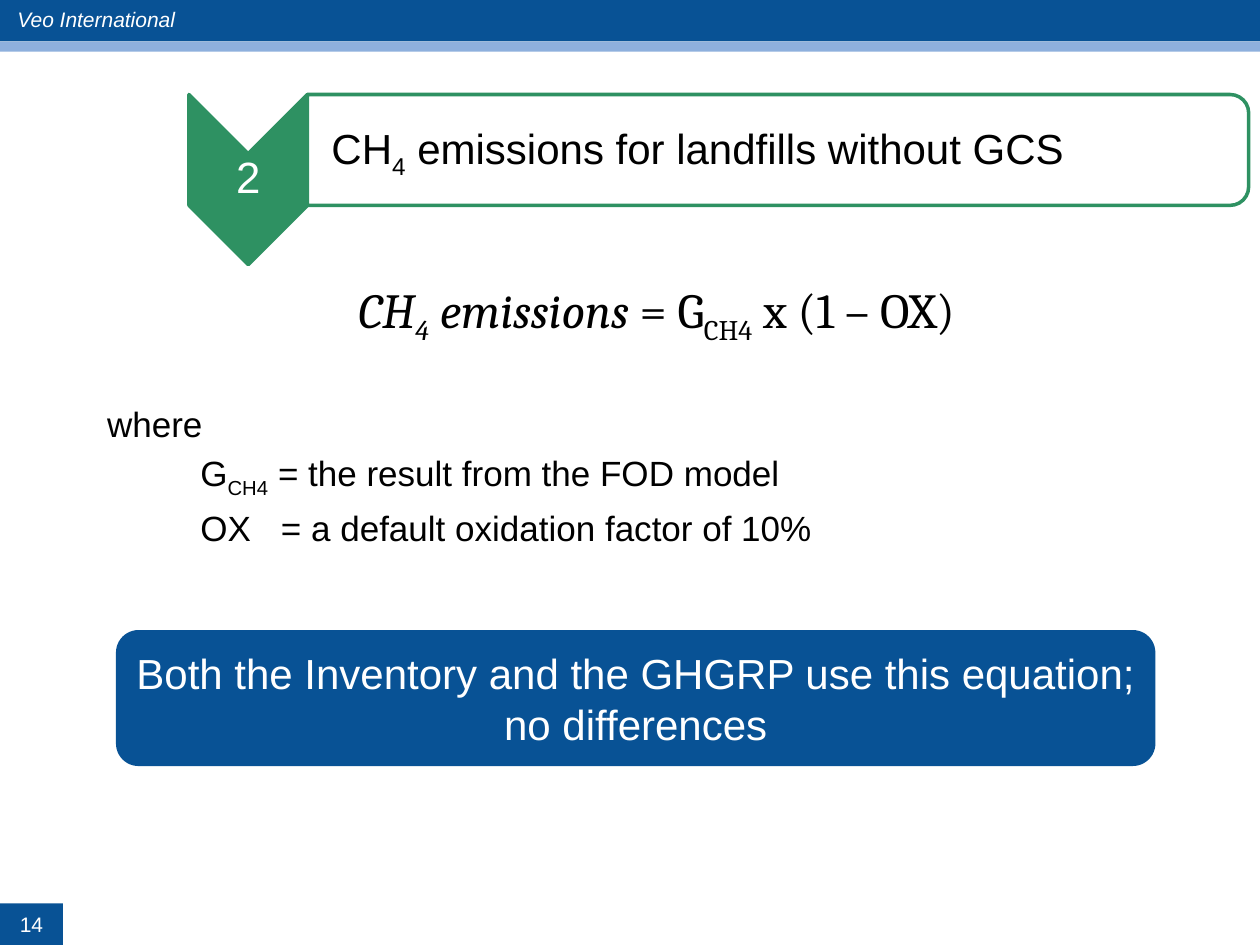
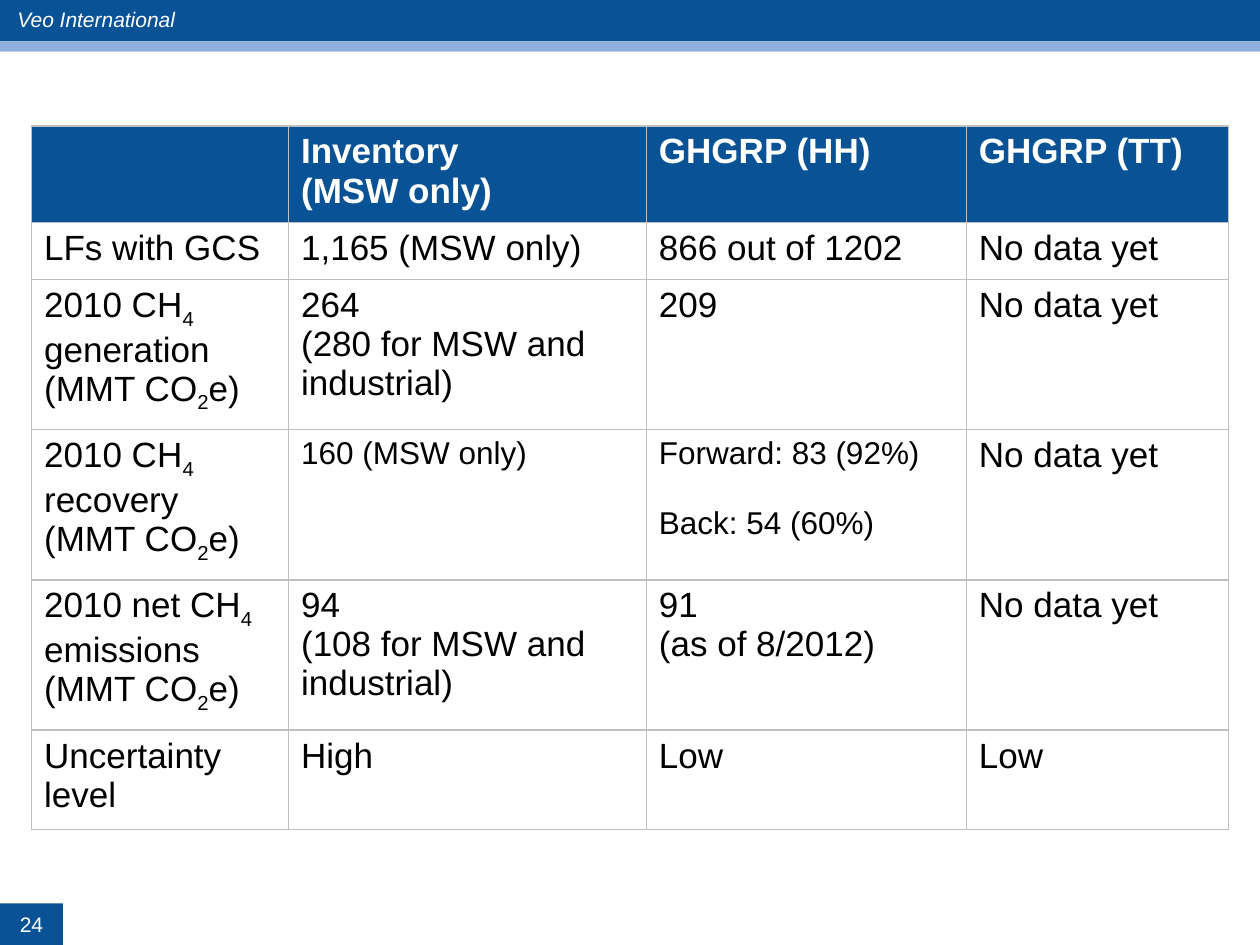
from lxml.etree import SubElement
from pptx import Presentation
from pptx.dml.color import RGBColor
from pptx.enum.shapes import MSO_SHAPE as SHAPE
from pptx.enum.text import MSO_ANCHOR as ANCHOR, MSO_AUTO_SIZE as AUTO, PP_ALIGN as ALIGN
from pptx.oxml.ns import qn
from pptx.util import Inches, Pt

COLORS = {"blue": "085295", "sky": "8EB0DD", "green": "2E9162",
          "grey": "BFBFBF", "white": "FFFFFF", "black": "000000"}
COL_WIDTHS = [2.04, 2.84, 2.54, 2.08]
ROW_HEIGHTS = [0.76, 0.45, 1.19, 1.19, 1.19, 0.79]
ROWS = [
    ["", "Inventory\n(MSW only)", "GHGRP (HH)", "GHGRP (TT)"],
    ["LFs with GCS", "1,165 (MSW only)", "866 out of 1202", "No data yet"],
    ["2010 CH_4_ generation\n(MMT CO_2_e)", "264\n(280 for MSW and industrial)",
     "209", "No data yet"],
    ["2010 CH_4_ recovery (MMT CO_2_e)", "160 (MSW only)",
     "Forward: 83 (92%)\nBack: 54 (60%)", "No data yet"],
    ["2010 net CH_4_ emissions\n(MMT CO_2_e)", "94\n(108 for MSW and industrial)",
     "91\n(as of 8/2012)", "No data yet"],
    ["Uncertainty level", "High", "Low", "Low"],
]
SMALL_CELLS = {(3, 1), (3, 2)}


def rgb(name):
    return RGBColor.from_string(COLORS[name])


def write(p, text, size=20, color="black", font="Arial", bold=False, italic=False,
          align=None, before=None, line=None):
    for i, part in enumerate(text.split("_")):
        if not part:
            continue
        r = p.add_run()
        r.text = part
        r.font.name, r.font.size = font, Pt(size)
        r.font.bold, r.font.italic = bold, italic
        r.font.color.rgb = rgb(color)
        if i % 2:
            r.font._element.set("baseline", "-25000")
    if align is not None:
        p.alignment = align
    if before is not None:
        p.space_before = Pt(before)
    if line is not None:
        p.line_spacing = line


def indent(p, left=0, first=0):
    pPr = p._p.get_or_add_pPr()
    pPr.set("marL", str(Inches(left)))
    pPr.set("indent", str(Inches(first)))
    SubElement(pPr, qn("a:buNone"))


def set_margins(tf, left, other):
    tf.margin_left = Inches(left)
    tf.margin_top = tf.margin_right = tf.margin_bottom = Inches(other)


def place(sp, x, y, w, h):
    sp.left, sp.top, sp.width, sp.height = map(Inches, (x, y, w, h))


def add_shape(s, kind, x, y, w, h, fill, line=None, turned=False):
    if turned:
        x, y, w, h = x + (w - h) / 2, y + (h - w) / 2, h, w
    sp = s.shapes.add_shape(kind, *map(Inches, (x, y, w, h)))
    sp.rotation = 90 if turned else 0
    sp.shadow.inherit = False
    sp.fill.solid()
    sp.fill.fore_color.rgb = rgb(fill)
    if line:
        sp.line.color.rgb = rgb(line)
        sp.line.width = Pt(2)
    else:
        sp.line.fill.background()
    return sp


def label(sp, text, **fmt):
    tf = sp.text_frame
    tf.word_wrap = True
    tf.vertical_anchor = ANCHOR.MIDDLE
    write(tf.paragraphs[0], text, align=ALIGN.CENTER, **fmt)


def add_master_bands(prs, s):
    top = add_shape(s, SHAPE.RECTANGLE, 0, 0, 10, 0.33, "blue")
    name = s.shapes.add_textbox(*map(Inches, (0.04, 0, 2.5, 0.3)))
    name.text_frame.word_wrap = True
    write(name.text_frame.paragraphs[0], "Veo International", size=12,
          color="white", italic=True, align=ALIGN.LEFT)
    under = add_shape(s, SHAPE.RECTANGLE, 0, 0.33, 10, 0.08, "sky")
    for sp in (top, name, under):
        prs.slide_master.shapes._spTree.append(sp._element)


def add_page_number(s, number):
    sp = add_shape(s, SHAPE.RECTANGLE, 0, 7.17, 0.5, 0.33, "blue")
    label(sp, str(number), size=12, color="white")


def add_step_title(s, number, text, x, y, w, bar_h=0.88, arrow_w=0.94, arrow_h=1.35):
    add_shape(s, SHAPE.CHEVRON, x, y, arrow_w, arrow_h, "green", "green", turned=True)
    num = s.shapes.add_textbox(*map(Inches, (x, y + 0.47, arrow_w, 0.4)))
    set_margins(num.text_frame, 0.02, 0.02)
    label(num, number, size=25, color="white", line=0.9)

    bar = x + arrow_w
    add_shape(s, SHAPE.ROUND_2_SAME_RECTANGLE, bar, y, w - arrow_w, bar_h,
              "white", "green", turned=True)
    title = s.shapes.title
    place(title, bar, y + 0.04, w - arrow_w - 0.04, bar_h - 0.09)
    s.shapes._spTree.append(title._element)
    tf = title.text_frame
    tf.auto_size = AUTO.NONE
    tf.vertical_anchor = ANCHOR.MIDDLE
    set_margins(tf, 0.19, 0.02)
    write(tf.paragraphs[0], text, size=24, align=ALIGN.LEFT, line=0.9)


def add_equation(s, x, y, w, h):
    body = s.placeholders[1]
    place(body, x, y, w, h)
    tf = body.text_frame
    tf.auto_size = AUTO.NONE
    p = tf.paragraphs[0]
    indent(p, 0.38, -0.38)
    write(p, "CH_4_ emissions ", size=28, font="Cambria", italic=True)
    write(p, "= G_CH4_ x (1 – OX)", size=28, font="Cambria", align=ALIGN.CENTER, before=0)
    for text, left, first, before in [
            ("where", 0, 0, 32),
            ("G_CH4_ = the result from the FOD model", 1.18, -0.44, 4),
            ("OX\t= a default oxidation factor of 10%", 1.38, -0.64, 4)]:
        p = tf.add_paragraph()
        indent(p, left, first)
        write(p, text, before=before)


def add_callout(s, text, x, y, w, h):
    sp = add_shape(s, SHAPE.ROUNDED_RECTANGLE, x, y, w, h, "blue")
    label(sp, text, size=24, color="white")


def add_borders(cell):
    tcPr = cell._tc.get_or_add_tcPr()
    for side in ("lnL", "lnR", "lnT", "lnB"):
        ln = SubElement(tcPr, qn(f"a:{side}"), w=str(Pt(1)))
        fill = SubElement(ln, qn("a:solidFill"))
        SubElement(fill, qn("a:srgbClr"), val=COLORS["grey"])


def add_comparison_table(s, x, y):
    size = map(Inches, (x, y, sum(COL_WIDTHS), sum(ROW_HEIGHTS)))
    table = s.shapes.add_table(len(ROWS), len(COL_WIDTHS), *size).table
    table.horz_banding = False
    for col, width in zip(table.columns, COL_WIDTHS):
        col.width = Inches(width)
    for i, (row, height) in enumerate(zip(ROWS, ROW_HEIGHTS)):
        table.rows[i].height = Inches(height)
        for j, text in enumerate(row):
            cell = table.cell(i, j)
            add_borders(cell)
            cell.fill.solid()
            cell.fill.fore_color.rgb = rgb("white" if i else "blue")
            small = (i, j) in SMALL_CELLS
            for k, part in enumerate(text.split("\n")):
                tf = cell.text_frame
                p = tf.add_paragraph() if k else tf.paragraphs[0]
                write(p, part, size=18 if small else 20, bold=i == 0,
                      color="black" if i else "white",
                      before=20 if small and k else 0)


def build_equation_slide(s):
    add_equation(s, 0.75, 2.17, 8.92, 2.7)
    add_page_number(s, 14)
    add_callout(s, "Both the Inventory and the GHGRP use this equation; no differences",
                0.92, 5, 8.25, 1.08)
    add_step_title(s, "2", "CH_4_ emissions for landfills without GCS", 1.5, 0.75, 8.41)


def build_table_slide(s):
    add_page_number(s, 24)
    add_comparison_table(s, 0.25, 1)


def main():
    prs = Presentation()
    prs.slide_width, prs.slide_height = Inches(10), Inches(7.5)
    s = prs.slides.add_slide(prs.slide_layouts[1])
    add_master_bands(prs, s)
    build_equation_slide(s)
    build_table_slide(prs.slides.add_slide(prs.slide_layouts[6]))
    prs.save("out.pptx")


if __name__ == "__main__":
    main()
